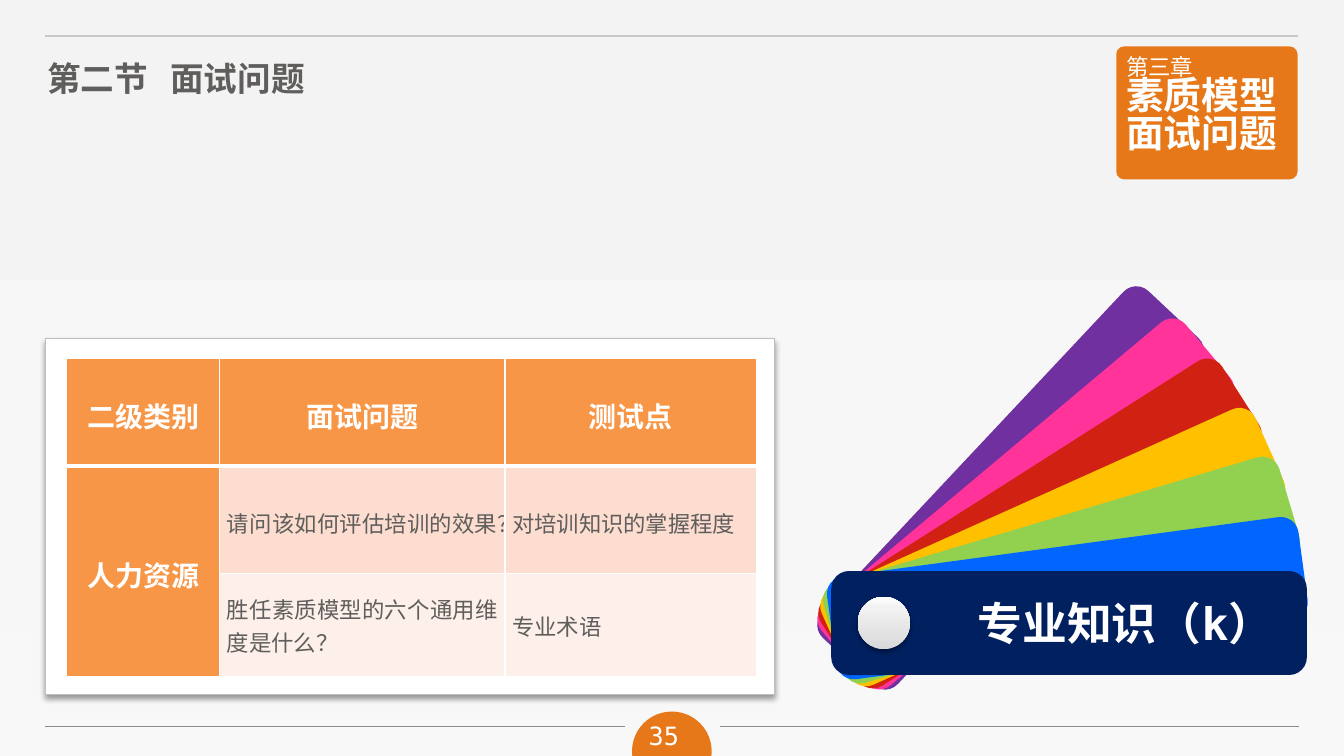
import dataclasses
import math

import lxml.etree
import pptx
import pptx.dml.color
import pptx.enum.shapes
import pptx.enum.text
import pptx.oxml.ns
import pptx.util

Cm = pptx.util.Cm
Pt = pptx.util.Pt
Shape = pptx.enum.shapes.MSO_SHAPE
Align = pptx.enum.text.PP_ALIGN
Anchor = pptx.enum.text.MSO_ANCHOR
qn = pptx.oxml.ns.qn


@dataclasses.dataclass(frozen=True)
class Theme:
    orange: str = "E67819"
    white: str = "FFFFFF"
    ink: str = "5F5E5C"
    top_rule: str = "C8C8C8"
    foot_rule: str = "8C8C8C"
    card_edge: str = "BFBFBF"
    head_fill: str = "F79646"
    row_fills: tuple = ("FCDDCF", "FDEFE9")
    fan: tuple = ("7030A0", "FF3399", "D12112", "FFC000", "92D050", "0066FF", "002060")
    backdrop: tuple = ((0, "F3F3F3"), (74, "F7F7F7"), (83, "F8F8F8"), (100, "F6F6F6"))
    rivet: tuple = ((0, "D9D9D9"), (80, "F2F2F2"), (100, "FFFFFF"))
    sans: str = "Noto Sans CJK SC"
    narrow: str = "Arial Narrow"
    mono: str = "DejaVu Sans Mono"
    small: int = 16
    number: int = 18
    head: int = 20
    title: int = 24
    chapter: int = 27
    label: int = 32


def rgb(code):
    return pptx.dml.color.RGBColor.from_string(code)


def add_xml(parent, tag, **attributes):
    return lxml.etree.SubElement(parent, qn(tag), attributes)


def write(para, text, size, color, font, bold=False, align=None, spacing=None):
    """Append one formatted span to a paragraph."""
    if align is not None:
        para.alignment = align
    if spacing is not None:
        para.line_spacing = spacing
    span = para.add_run()
    span.text = text
    span.font.size = Pt(size)
    span.font.bold = bold
    span.font.color.rgb = rgb(color)
    span.font.name = font
    properties = span._r.get_or_add_rPr()
    properties.set("lang", "zh-CN")
    add_xml(properties, "a:ea", typeface=Theme.sans)


def set_gradient(fill, element, stops, angle):
    fill.gradient()
    fill.gradient_angle = angle
    stop_list = element.find(".//" + qn("a:gsLst"))
    for old_stop in list(stop_list):
        stop_list.remove(old_stop)
    for position, color in stops:
        stop = add_xml(stop_list, "a:gs", pos=str(position * 1000))
        add_xml(stop, "a:srgbClr", val=color)


def set_border(cell, side, width):
    line = add_xml(cell._tc.get_or_add_tcPr(), "a:" + side, w=str(Pt(width)))
    add_xml(add_xml(line, "a:solidFill"), "a:srgbClr", val=Theme.white)


class Board:
    """The theme and the current page, with one method per kind of element."""

    def __init__(self, deck, theme):
        self.theme = theme
        self.page = deck.slides.add_slide(deck.slide_layouts[5])
        set_gradient(self.page.background.fill, self.page.element, theme.backdrop, 270)

    def frame(self, box, anchor=Anchor.TOP):
        frame = box.text_frame
        frame.word_wrap = True
        frame.auto_size = pptx.enum.text.MSO_AUTO_SIZE.NONE
        frame.vertical_anchor = anchor
        return frame

    def title(self, left, top, width, height):
        box = self.page.shapes.title
        box.left, box.top, box.width, box.height = map(Cm, (left, top, width, height))
        para = self.frame(box, Anchor.MIDDLE).paragraphs[0]
        return para

    def text(self, left, top, width, height):
        return self.frame(self.page.shapes.add_textbox(*map(Cm, (left, top, width, height))))

    def shape(self, kind, left, top, width, height, fill=None, adjust=(), turn=0, edge=None):
        shape = self.page.shapes.add_shape(kind, *map(Cm, (left, top, width, height)))
        shape.shadow.inherit = False
        shape.rotation = turn
        for index, value in enumerate(adjust):
            shape.adjustments[index] = value
        if fill:
            shape.fill.solid()
            shape.fill.fore_color.rgb = rgb(fill)
        if edge:
            shape.line.color.rgb = rgb(edge)
            shape.line.width = Pt(0.25)
        else:
            shape.line.fill.background()
        return shape

    def drop_shadow(self, shape, blur, distance, opacity):
        effects = shape.element.spPr.find(qn("a:effectLst"))
        shadow = add_xml(effects, "a:outerShdw", blurRad=str(Pt(blur)), dist=str(Pt(distance)),
                         dir="5400000", algn="t", rotWithShape="0")
        color = add_xml(shadow, "a:srgbClr", val="000000")
        add_xml(color, "a:alpha", val=str(opacity * 1000))

    def rule(self, start, end, y, color, width):
        line = self.page.shapes.add_connector(
            pptx.enum.shapes.MSO_CONNECTOR.STRAIGHT, Cm(start), Cm(y), Cm(end), Cm(y))
        line.line.color.rgb = rgb(color)
        line.line.width = Pt(width)
        add_xml(line.element.spPr, "a:effectLst")

    def table(self, left, top, widths, heights):
        holder = self.page.shapes.add_table(len(heights), len(widths), Cm(left), Cm(top),
                                            Cm(sum(widths)), Cm(sum(heights)))
        table = holder.table
        table.horz_banding = False
        for column, width in zip(table.columns, widths):
            column.width = Cm(width)
        for row, height in zip(table.rows, heights):
            row.height = Cm(height)
        return table

    def cell(self, cell, text, fill, under=1, **form):
        cell.vertical_anchor = Anchor.MIDDLE
        cell.margin_left = cell.margin_right = Cm(0.18)
        cell.margin_top = cell.margin_bottom = 0
        for side, width in (("lnL", 1), ("lnR", 1), ("lnT", 1), ("lnB", under)):
            set_border(cell, side, width)
        cell.fill.solid()
        cell.fill.fore_color.rgb = rgb(fill)
        if text:
            write(cell.text_frame.paragraphs[0], text, font=self.theme.sans, **form)


def draw_frame(board):
    theme = board.theme
    board.shape(Shape.ROUNDED_RECTANGLE, 28.14, 1.17, 4.57, 3.35, theme.orange, (0.058,))
    board.rule(1.14, 32.72, 0.91, theme.top_rule, 1.5)
    board.shape(Shape.CHORD, 15.93, 17.93, 2.01, 2.01, theme.orange, (35.77, 153.29), 112.4)
    number = board.text(15.63, 18.03, 2.21, 1.02).paragraphs[0]
    write(number, "35", theme.number, theme.white, theme.mono, align=Align.CENTER)
    for start, end in ((1.14, 15.75), (18.14, 32.74)):
        board.rule(start, end, 18.31, theme.foot_rule, 0.75)

    chapter = board.text(28.14, 1.32, 4.52, 3.25)
    lines = (("第三章", theme.small), ("素质模型", theme.chapter), ("面试问题", theme.chapter))
    for index, (text, size) in enumerate(lines):
        para = chapter.add_paragraph() if index else chapter.paragraphs[0]
        write(para, text, size, theme.white, theme.sans, bold=index > 0, spacing=0.83)

    title = board.title(0.94, 1.32, 13.79, 1.27)
    for text, font in (("第二节\t", theme.narrow), ("面试问题", theme.sans)):
        write(title, text, theme.title, theme.ink, font, bold=True, align=Align.LEFT)
    tabs = add_xml(title._p.get_or_add_pPr(), "a:tabLst")
    add_xml(tabs, "a:tab", pos=str(Cm(3.1)), algn="l")


def draw_questions(board):
    theme = board.theme
    card = board.shape(Shape.RECTANGLE, 1.14, 8.53, 18.39, 8.97, theme.white, edge=theme.card_edge)
    board.drop_shadow(card, 4, 3, 40)
    table = board.table(1.68, 9.02, (3.86, 7.19, 6.33), (2.72, 2.72, 2.59))
    rows = (("二级类别", "面试问题", "测试点"),
            ("人力资源", "请问该如何评估培训的效果？", "对培训知识的掌握程度"),
            ("", "胜任素质模型的六个通用维度是什么？", "专业术语"))
    heading = dict(size=theme.head, color=theme.white, bold=True, align=Align.CENTER, spacing=1.15)
    for r, row in enumerate(rows):
        body = dict(size=theme.small, color=theme.ink, align=Align.JUSTIFY,
                    spacing=1.15 if r == 1 else 1.0)
        for c, text in enumerate(row):
            is_head = r == 0 or c == 0
            fill = theme.head_fill if is_head else theme.row_fills[r - 1]
            board.cell(table.cell(r, c), text, fill, 1 if r else 3, **(heading if is_head else body))
    table.cell(1, 0).merge(table.cell(2, 0))


def draw_fan(board):
    """Strips turned around one rivet, the last one level and labelled."""
    theme = board.theme
    pivot_x, pivot_y, reach = 22.28, 15.7, 4.67
    length, breadth = 11.99, 2.62
    for tilt, color in zip((46.8, 40, 32.5, 24.2, 16.6, 7.7, 0), theme.fan):
        center_x = pivot_x + reach * math.cos(math.radians(tilt))
        center_y = pivot_y - reach * math.sin(math.radians(tilt))
        strip = board.shape(Shape.ROUNDED_RECTANGLE, center_x - length / 2, center_y - breadth / 2,
                            length, breadth, color, (0.17,), -tilt)
    frame = board.frame(strip, Anchor.MIDDLE)
    frame.margin_right = Cm(0.71)
    for text, font in (("专业知识", theme.sans), ("（k）", theme.mono)):
        write(frame.paragraphs[0], text, theme.label, theme.white, font, bold=True, align=Align.RIGHT)
    rivet = board.shape(Shape.OVAL, 21.62, 15.04, 1.32, 1.32)
    set_gradient(rivet.fill, rivet.element, theme.rivet, 90)
    board.drop_shadow(rivet, 3.1, 1.8, 35)


def main():
    deck = pptx.Presentation()
    deck.slide_width, deck.slide_height = Cm(33.88), Cm(19.05)
    board = Board(deck, Theme())
    draw_frame(board)
    draw_questions(board)
    draw_fan(board)
    deck.save("out.pptx")


if __name__ == "__main__":
    main()
